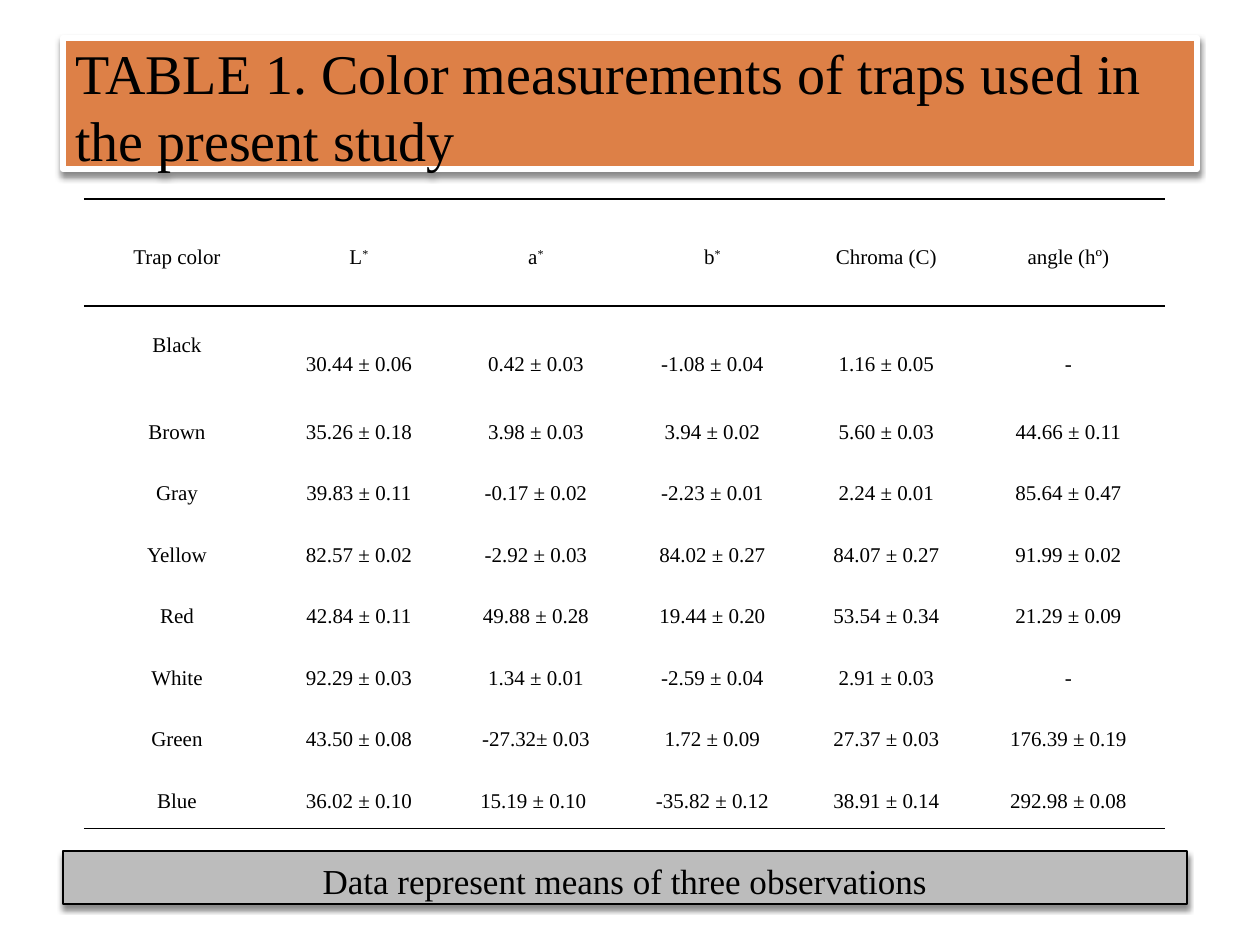
from lxml.etree import SubElement
from pptx import Presentation
from pptx.dml.color import RGBColor
from pptx.enum.shapes import MSO_SHAPE as Shape
from pptx.enum.text import MSO_ANCHOR as Anchor, PP_ALIGN as Align
from pptx.oxml.ns import qn
from pptx.util import Emu, Pt

PX = 914400 // 126
BLACK = RGBColor(0x00, 0x00, 0x00)
WHITE = RGBColor(0xFF, 0xFF, 0xFF)
ORANGE = RGBColor(0xDD, 0x80, 0x47)
GRAY = RGBColor(0xBC, 0xBC, 0xBC)
FONT = "Times New Roman"

HEADINGS = ["Trap color", "L*", "a*", "b*", "Chroma (C)", "angle (hº)"]
MEASUREMENTS = [
    ["Black", "30.44 ± 0.06", "0.42 ± 0.03", "-1.08 ± 0.04", "1.16 ± 0.05", "-"],
    ["Brown", "35.26 ± 0.18", "3.98 ± 0.03", "3.94 ± 0.02", "5.60 ± 0.03", "44.66 ± 0.11"],
    ["Gray", "39.83 ± 0.11", "-0.17 ± 0.02", "-2.23 ± 0.01", "2.24 ± 0.01", "85.64 ± 0.47"],
    ["Yellow", "82.57 ± 0.02", "-2.92 ± 0.03", "84.02 ± 0.27", "84.07 ± 0.27", "91.99 ± 0.02"],
    ["Red", "42.84 ± 0.11", "49.88 ± 0.28", "19.44 ± 0.20", "53.54 ± 0.34", "21.29 ± 0.09"],
    ["White", "92.29 ± 0.03", "1.34 ± 0.01", "-2.59 ± 0.04", "2.91 ± 0.03", "-"],
    ["Green", "43.50 ± 0.08", "-27.32± 0.03", "1.72 ± 0.09", "27.37 ± 0.03", "176.39 ± 0.19"],
    ["Blue", "36.02 ± 0.10", "15.19 ± 0.10 ", "-35.82 ± 0.12", "38.91 ± 0.14", "292.98 ± 0.08"],
]
COLUMN_WIDTHS = [186, 178, 176, 177, 171, 193]
HEADING_HEIGHT, BLACK_HEIGHT = 107, 92
TOP_GAP = 24


def px(length):
    return Emu(length * PX)


def style(paragraph, size, align):
    paragraph.alignment = align
    paragraph.font.size = Pt(size)
    paragraph.font.name = FONT
    paragraph.font.color.rgb = BLACK


def add_shadow(shape):
    shape.shadow.inherit = False
    effects = shape._element.spPr.find(qn("a:effectLst"))
    shadow = SubElement(effects, qn("a:outerShdw"), blurRad=str(Pt(3)),
                        dist=str(Pt(2.4)), dir="5400000", rotWithShape="0")
    color = SubElement(shadow, qn("a:srgbClr"), val=str(BLACK))
    SubElement(color, qn("a:alpha"), val="45000")


def add_banner(slide, box, text, size, align, fill, line, line_width, top_inset):
    banner = slide.shapes.add_shape(Shape.RECTANGLE, *map(px, box))
    banner.fill.solid()
    banner.fill.fore_color.rgb = fill
    banner.line.color.rgb = line
    banner.line.width = Pt(line_width)
    add_shadow(banner)
    frame = banner.text_frame
    frame.word_wrap = True
    frame.vertical_anchor = Anchor.MIDDLE
    frame.margin_top, frame.margin_bottom = px(top_inset), px(0)
    frame.text = text
    style(frame.paragraphs[0], size, align)


def add_rules(cell, edges):
    properties = cell._tc.get_or_add_tcPr()
    for position, edge in enumerate(("lnL", "lnR", "lnT", "lnB")):
        rule = properties.makeelement(qn(f"a:{edge}"), {"w": str(Pt(1))})
        if edge in edges:
            fill = SubElement(rule, qn("a:solidFill"))
            SubElement(fill, qn("a:srgbClr"), val=str(BLACK))
        else:
            SubElement(rule, qn("a:noFill"))
        properties.insert(position, rule)


def fill_cell(cell, text, spacing, top_gap, edges):
    cell.fill.solid()
    cell.fill.fore_color.rgb = WHITE
    cell.margin_left = cell.margin_right = px(9)
    cell.margin_top, cell.margin_bottom = px(top_gap), px(0)
    paragraph = cell.text_frame.paragraphs[0]
    paragraph.line_spacing = spacing
    style(paragraph, 12, Align.CENTER)
    paragraph.add_run().text = text.rstrip("*")
    if text.endswith("*"):
        star = paragraph.add_run()
        star.text = "*"
        star.font._element.set("baseline", "30000")


def add_measurements(slide, box):
    rows = [HEADINGS] + MEASUREMENTS
    last = len(rows) - 1
    table = slide.shapes.add_table(len(rows), len(HEADINGS), *map(px, box)).table
    table.first_row = table.horz_banding = False
    for column, width in zip(table.columns, COLUMN_WIDTHS):
        column.width = px(width)
    rest = box[3] - HEADING_HEIGHT - BLACK_HEIGHT
    count = len(rows) - 2
    heights = [HEADING_HEIGHT, BLACK_HEIGHT]
    heights += [(i + 1) * rest // count - i * rest // count for i in range(count)]
    edges = {0: ("lnT", "lnB"), 1: ("lnT",), last: ("lnB",)}
    for r, texts in enumerate(rows):
        table.rows[r].height = px(heights[r])
        for c, text in enumerate(texts):
            cell = table.cell(r, c)
            spacing = 1.15 if text == "Black" else 2.0
            fill_cell(cell, text, spacing, TOP_GAP if r < 2 else 0, edges.get(r, ()))
            add_rules(cell, edges.get(r, ()))


def main():
    deck = Presentation()
    deck.slide_width, deck.slide_height = px(1260), px(945)
    slide = deck.slides.add_slide(deck.slide_layouts[6])
    add_banner(slide, (63, 851, 1124, 53), "Data represent means of three observations",
               20, Align.CENTER, GRAY, BLACK, 1, 6)
    add_banner(slide, (63, 38, 1134, 131),
               "TABLE 1. Color measurements of traps used in the present study",
               32, Align.LEFT, ORANGE, WHITE, 3.5, 4)
    add_measurements(slide, (84, 199, sum(COLUMN_WIDTHS), 630))
    deck.save("out.pptx")


if __name__ == "__main__":
    main()
